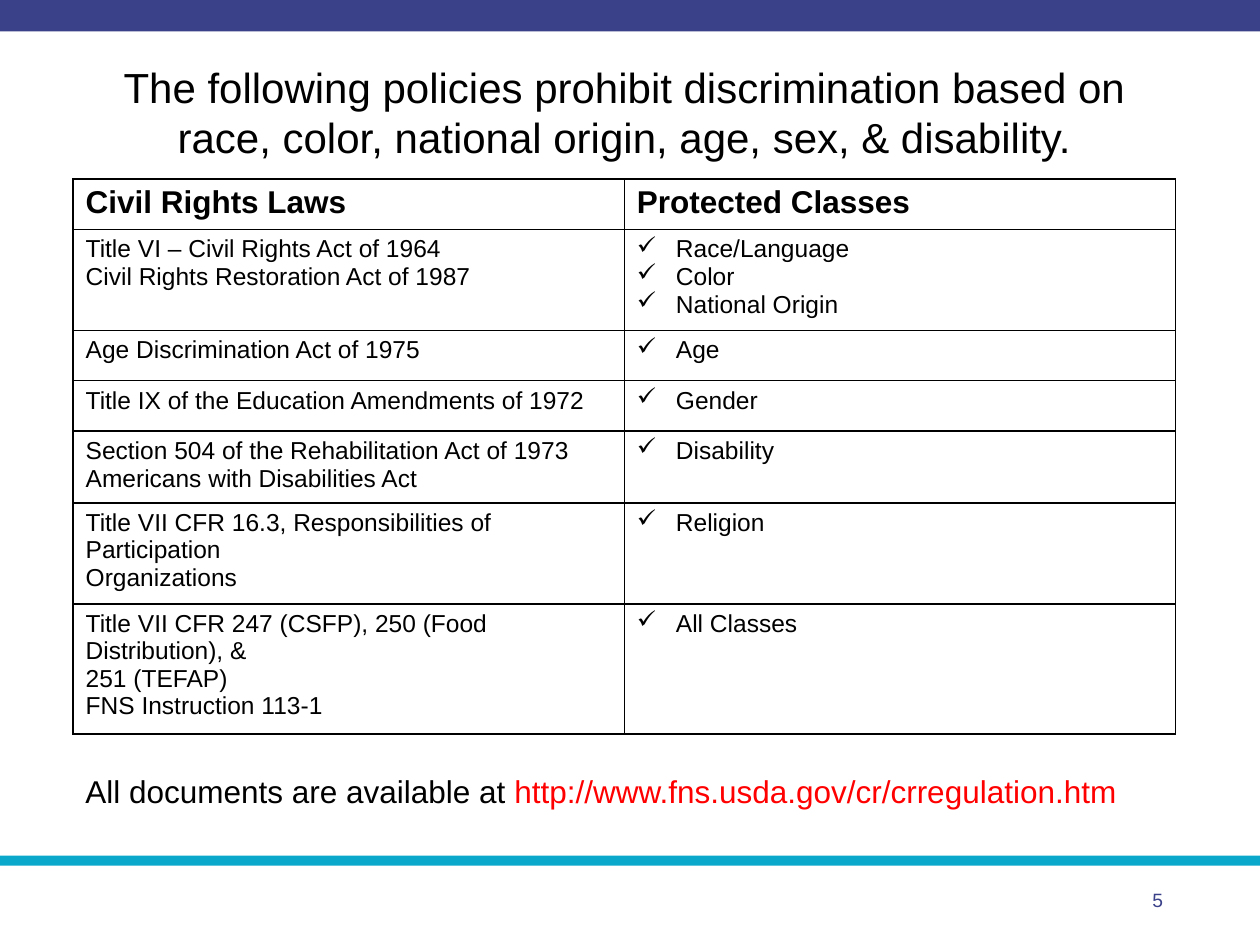
from dataclasses import dataclass

from lxml import etree
from pptx import Presentation
from pptx.dml.color import RGBColor
from pptx.enum.shapes import MSO_SHAPE
from pptx.enum.text import MSO_ANCHOR, PP_ALIGN
from pptx.oxml.ns import qn
from pptx.util import Inches, Pt

RECTANGLE = MSO_SHAPE.RECTANGLE
MIDDLE = MSO_ANCHOR.MIDDLE
LEFT, CENTER, RIGHT = PP_ALIGN.LEFT, PP_ALIGN.CENTER, PP_ALIGN.RIGHT

WIDTH, HEIGHT = 10, 7.5
MARGIN = 0.58
CONTENT_WIDTH = 8.75


@dataclass(frozen=True)
class Theme:
    font: str = "Arial"
    text: str = "000000"
    link: str = "FF0000"
    navy: str = "3A4189"
    cyan: str = "0AA8CB"
    title_size: int = 24
    heading_size: int = 18
    body_size: int = 14
    number_size: int = 11
    border_width: float = 1
    bullet_indent: float = 0.31


THEME = Theme()

HEADINGS = ("Civil Rights Laws", "Protected Classes")
HEADING_HEIGHT = 0.4
# Row height, laws, protected classes
POLICIES = [
    (0.8, ["Title VI – Civil Rights Act of 1964", "Civil Rights Restoration Act of 1987"],
     ["Race/Language", "Color", "National Origin"]),
    (0.4, ["Age Discrimination Act of 1975"], ["Age"]),
    (0.4, ["Title IX of the Education Amendments of 1972"], ["Gender"]),
    (0.57, ["Section 504 of the Rehabilitation Act of 1973", "Americans with Disabilities Act"],
     ["Disability"]),
    (0.8, ["Title VII CFR 16.3, Responsibilities of Participation", "Organizations"],
     ["Religion"]),
    (1.03, ["Title VII CFR 247 (CSFP), 250 (Food Distribution), &", "251 (TEFAP)",
            "FNS Instruction 113-1"], ["All Classes"]),
]


def inches(box):
    return [Inches(length) for length in box]


def write(paragraph, text, size, color=THEME.text, bold=False, align=LEFT):
    """Add one formatted run to a paragraph."""
    paragraph.alignment = align
    run = paragraph.add_run()
    run.text = text
    run.font.name = THEME.font
    run.font.size = Pt(size)
    run.font.bold = bold
    run.font.color.rgb = RGBColor.from_string(color)


def add_check_bullet(paragraph):
    properties = paragraph._p.get_or_add_pPr()
    indent = Inches(THEME.bullet_indent)
    properties.set("marL", str(indent))
    properties.set("indent", str(-indent))
    etree.SubElement(properties, qn("a:buChar"), char="✓")


def add_band(slide, box, color):
    band = slide.shapes.add_shape(RECTANGLE, *inches(box))
    band.shadow.inherit = False
    band.fill.solid()
    band.fill.fore_color.rgb = RGBColor.from_string(color)
    band.line.fill.background()


def add_text_box(slide, box):
    """Return the first paragraph of a new wrapping text box."""
    frame = slide.shapes.add_textbox(*inches(box)).text_frame
    frame.word_wrap = True
    frame.vertical_anchor = MIDDLE
    return frame.paragraphs[0]


def add_title(slide, box, lines):
    title = slide.shapes.title
    title.left, title.top, title.width, title.height = inches(box)
    frame = title.text_frame
    frame.vertical_anchor = MIDDLE
    frame.margin_bottom = Inches(0.1)
    paragraph = frame.paragraphs[0]
    for index, line in enumerate(lines):
        if index:
            paragraph.add_line_break()
        write(paragraph, line, THEME.title_size, align=CENTER)


def outline_cell(cell):
    properties = cell._tc.get_or_add_tcPr()
    for side in ("lnL", "lnR", "lnT", "lnB"):
        line = etree.SubElement(properties, qn(f"a:{side}"), w=str(Pt(THEME.border_width)))
        fill = etree.SubElement(line, qn("a:solidFill"))
        etree.SubElement(fill, qn("a:srgbClr"), val=THEME.text)
    cell.fill.background()


def fill_cell(cell, lines, size, bold=False, checked=False):
    outline_cell(cell)
    frame = cell.text_frame
    for index, line in enumerate(lines):
        paragraph = frame.add_paragraph() if index else frame.paragraphs[0]
        if checked:
            add_check_bullet(paragraph)
        write(paragraph, line, size, bold=bold)


def add_policy_table(slide, box):
    table = slide.shapes.add_table(len(POLICIES) + 1, len(HEADINGS), *inches(box)).table
    table.first_row = table.horz_banding = False
    for column in table.columns:
        column.width = Inches(box[2] / len(HEADINGS))
    # Heading row
    table.rows[0].height = Inches(HEADING_HEIGHT)
    for index, heading in enumerate(HEADINGS):
        fill_cell(table.cell(0, index), [heading], THEME.heading_size, bold=True)
    # Policy rows
    for index, (height, laws, classes) in enumerate(POLICIES, start=1):
        table.rows[index].height = Inches(height)
        fill_cell(table.cell(index, 0), laws, THEME.body_size)
        fill_cell(table.cell(index, 1), classes, THEME.body_size, checked=True)


def add_source_note(slide, box):
    paragraph = add_text_box(slide, box)
    write(paragraph, "All documents are available at ", THEME.heading_size)
    write(paragraph, "http://www.fns.usda.gov/cr/crregulation.htm", THEME.heading_size,
          color=THEME.link)


def add_frame(slide, number):
    """Top band, footer rule and slide number."""
    add_band(slide, (0, 0, WIDTH, 0.25), THEME.navy)
    add_band(slide, (0, 6.79, WIDTH, 0.08), THEME.cyan)
    number_width = 2.25
    left = MARGIN + CONTENT_WIDTH - number_width
    paragraph = add_text_box(slide, (left, 7, number_width, 0.29))
    write(paragraph, number, THEME.number_size, color=THEME.navy, align=RIGHT)


def main():
    presentation = Presentation()
    presentation.slide_width, presentation.slide_height = Inches(WIDTH), Inches(HEIGHT)
    slide = presentation.slides.add_slide(presentation.slide_layouts.get_by_name("Title Only"))
    add_frame(slide, "5")
    add_title(slide, (MARGIN, 0.4, CONTENT_WIDTH, 1.02), [
        "The following policies prohibit discrimination based on",
        "race, color, national origin, age, sex, & disability.",
    ])
    add_policy_table(slide, (MARGIN, 1.42, CONTENT_WIDTH, 4.4))
    add_source_note(slide, (MARGIN, 6.08, CONTENT_WIDTH, 0.4))
    presentation.save("out.pptx")


if __name__ == "__main__":
    main()
